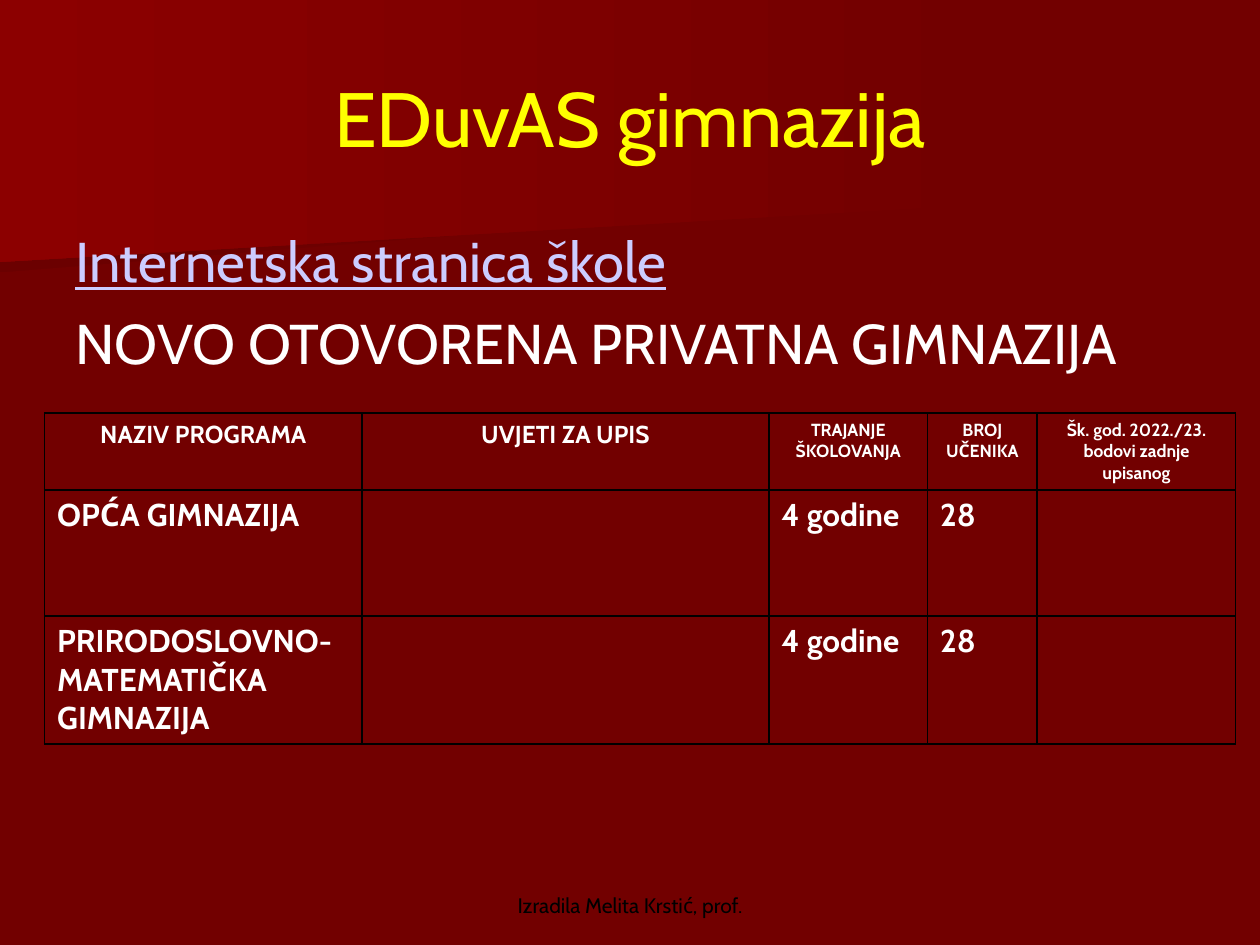
"""Build a slide presenting the programmes of a private grammar school."""
from lxml.etree import SubElement
from pptx import Presentation
from pptx.dml.color import RGBColor
from pptx.enum.text import MSO_ANCHOR as Anchor, MSO_AUTO_SIZE as AutoSize, PP_ALIGN as Align
from pptx.oxml import parse_xml
from pptx.oxml.ns import nsdecls, qn
from pptx.util import Cm, Pt

FONT = "Cabin"
DARK_RED = RGBColor(0x72, 0x00, 0x00)
SHADE_RED = RGBColor(0x6B, 0x00, 0x00)
BRIGHT_RED = RGBColor(0x8C, 0x00, 0x00)
YELLOW = RGBColor(0xFF, 0xFF, 0x00)
LILAC = RGBColor(0xCC, 0xCC, 0xFF)
WHITE = RGBColor(0xFF, 0xFF, 0xFF)
BLACK = RGBColor(0x00, 0x00, 0x00)

TITLE = "EDuvAS gimnazija"
INTRO = [
    ("Internetska stranica škole", LILAC, True),
    ("NOVO OTOVORENA PRIVATNA GIMNAZIJA", WHITE, False),
]
FOOTER = "Izradila Melita Krstić, prof."
HEADERS = [
    ("NAZIV PROGRAMA", 14),
    ("UVJETI ZA UPIS", 14),
    ("TRAJANJE ŠKOLOVANJA", 10),
    ("BROJ UČENIKA", 10),
    ("Šk. god. 2022./23. bodovi zadnje upisanog", 10),
]
PROGRAMMES = [
    ("OPĆA GIMNAZIJA", "", "4 godine", "28", ""),
    ("PRIRODOSLOVNO-MATEMATIČKA GIMNAZIJA", "", "4 godine", "28", ""),
]
COLUMN_WIDTHS = [6.4, 8.2, 3.2, 2.21, 4]
ROW_HEIGHTS = [1.5, 2.54, 2.44]
BANDS = [
    ([(19.76, 3.89), (0, 5.49), (0, 2.57), (19.79, 2.57), (19.76, 3.25)], SHADE_RED),
    ([(20.09, 4.11), (0, 5.28), (0, 0), (20.12, 0)], BRIGHT_RED),
]


def write(frame, text, size, color, align=Align.LEFT, bold=False, underline=False,
          before=0, spacing=None, first=True):
    para = frame.paragraphs[0] if first else frame.add_paragraph()
    para.alignment = align
    para.space_before = Pt(before)
    if spacing:
        para.line_spacing = spacing
    span = para.add_run()
    span.text = text
    font = span.font
    font.name, font.size, font.bold, font.underline = FONT, Pt(size), bold, underline
    font.color.rgb = color


def add_band(page, points, left_color):
    corners = [(Cm(x), Cm(y)) for x, y in points]
    builder = page.shapes.build_freeform(*corners[0])
    builder.add_line_segments(corners[1:], close=True)
    band = builder.convert_to_shape()
    band.shadow.inherit = False
    band.line.fill.background()
    band.fill.gradient()
    band.fill.gradient_angle = 180
    for stop, color in zip(band.fill.gradient_stops, (DARK_RED, left_color)):
        stop.color.rgb = color


def place(box, left, top, width, height, anchor):
    box.left, box.top, box.width, box.height = map(Cm, (left, top, width, height))
    frame = box.text_frame
    frame.word_wrap = True
    frame.auto_size = AutoSize.NONE
    frame.vertical_anchor = anchor
    return frame


def add_text_box(page, *area, anchor=Anchor.TOP):
    return place(page.shapes.add_textbox(0, 0, 0, 0), *area, anchor)


def style_cell(cell):
    cell.fill.background()
    properties = cell._tc.get_or_add_tcPr()
    for position, side in enumerate("LRTB"):
        border = parse_xml(f'<a:ln{side} {nsdecls("a")} w="{Pt(1)}"/>')
        fill = SubElement(border, qn("a:solidFill"))
        SubElement(fill, qn("a:srgbClr"), val=str(BLACK))
        properties.insert(position, border)


def add_programme_table(page):
    table = page.shapes.add_table(
        len(ROW_HEIGHTS), len(COLUMN_WIDTHS), Cm(0.9), Cm(8.33),
        Cm(sum(COLUMN_WIDTHS)), Cm(sum(ROW_HEIGHTS))).table
    for column, width in zip(table.columns, COLUMN_WIDTHS):
        column.width = Cm(width)
    for row, height in zip(table.rows, ROW_HEIGHTS):
        row.height = Cm(height)
    for cell in table.iter_cells():
        style_cell(cell)
    for index, (text, size) in enumerate(HEADERS):
        write(table.cell(0, index).text_frame, text, size, WHITE, align=Align.CENTER,
              bold=True, before=size / 4, spacing=1.01)
    for row, programme in enumerate(PROGRAMMES, 1):
        for column, text in enumerate(programme):
            if text:
                write(table.cell(row, column).text_frame, text, 18, WHITE, bold=True)


def main():
    deck = Presentation()
    deck.slide_width, deck.slide_height = Cm(25.4), Cm(19.05)
    page = deck.slides.add_slide(deck.slide_layouts[5])
    page.background.fill.solid()
    page.background.fill.fore_color.rgb = DARK_RED

    for points, left_color in BANDS:
        add_band(page, points, left_color)

    title = page.shapes.title
    page.shapes.element.append(title.element)
    write(place(title, 1.27, 0.76, 22.86, 3.18, Anchor.MIDDLE), TITLE, 44, YELLOW,
          align=Align.CENTER)

    intro = add_text_box(page, 1.27, 4.45, 22.86, 3.8)
    for index, (text, color, underline) in enumerate(INTRO):
        write(intro, text, 32, color, underline=underline, before=8, first=index == 0)

    footer = add_text_box(page, 8.69, 17.35, 8.03, 1.27, anchor=Anchor.BOTTOM)
    write(footer, FOOTER, 12, BLACK, align=Align.CENTER)
    add_programme_table(page)
    deck.save("out.pptx")


if __name__ == "__main__":
    main()
